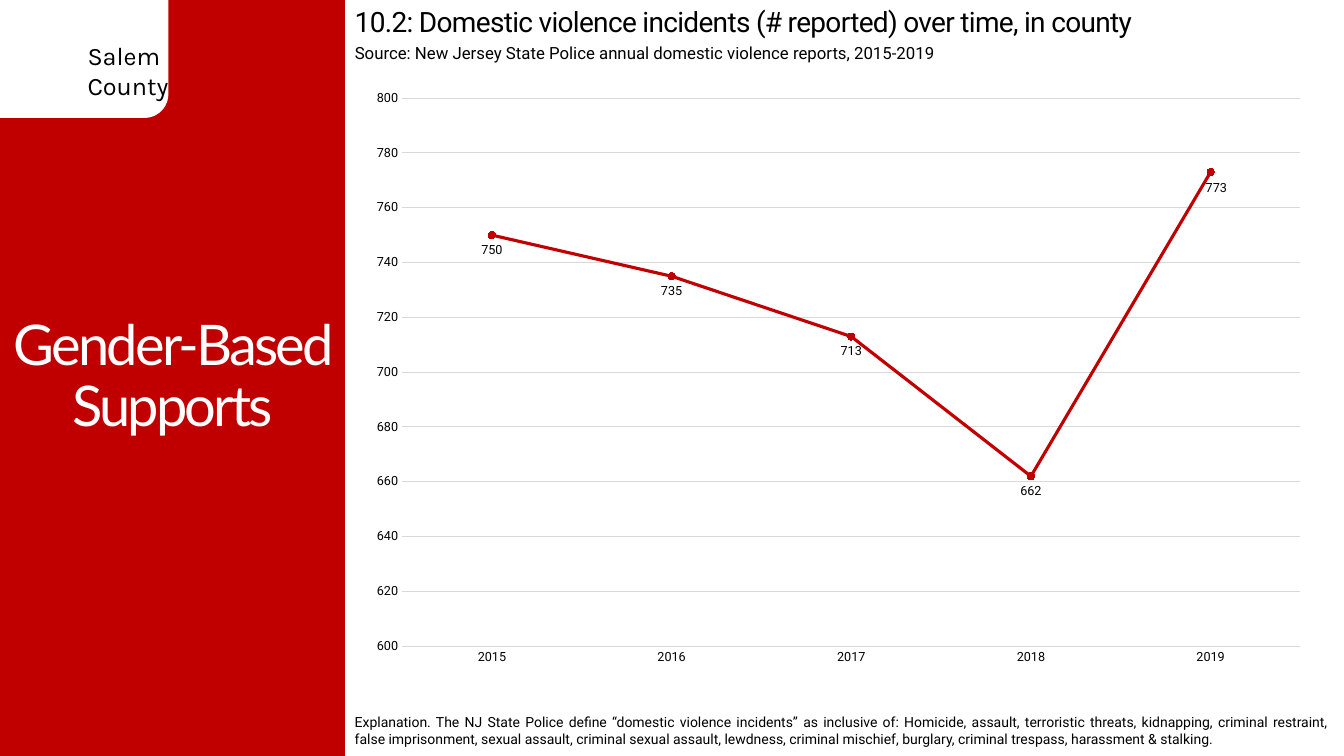
"""Builds the Salem County slide on domestic violence incidents over time."""
from lxml.etree import SubElement
from pptx import Presentation
from pptx.chart.data import CategoryChartData
from pptx.dml.color import RGBColor
from pptx.enum.chart import XL_CHART_TYPE, XL_LABEL_POSITION, XL_MARKER_STYLE, XL_TICK_MARK
from pptx.enum.shapes import MSO_SHAPE
from pptx.enum.text import MSO_ANCHOR, PP_ALIGN
from pptx.oxml import parse_xml
from pptx.oxml.ns import nsdecls, qn
from pptx.util import Pt

PX = 9144
COLORS = {"red": "C00000", "white": "FFFFFF", "black": "000000", "grid": "D9D9D9"}

PANELS = [
    (MSO_SHAPE.RECTANGLE, (0, 0, 342, 750), "red"),
    (MSO_SHAPE.ROUNDED_RECTANGLE, (-33, -25, 200, 142), "white"),
]

TEXTS = [
    {"lines": ["Salem", "County"], "box": (77, 35, 100, 71), "font": "Karla", "size": 18, "wrap": False},
    {"lines": ["10.2: Domestic violence incidents (# reported) over time, in county"],
     "box": (342, 0, 986, 44), "size": 20, "spacing": -50},
    {"lines": ["Source: New Jersey State Police annual domestic violence reports, 2015-2019"],
     "box": (342, 37, 919, 30), "size": 12},
    {"lines": ["Explanation. The NJ State Police define “domestic violence incidents” as inclusive of: "
               "Homicide, assault, terroristic threats, kidnapping, criminal restraint, false "
               "imprisonment, sexual assault, criminal sexual assault, lewdness, criminal mischief, "
               "burglary, criminal trespass, harassment & stalking."],
     "box": (342, 700, 984, 50), "size": 10, "align": PP_ALIGN.JUSTIFY, "anchor": MSO_ANCHOR.MIDDLE},
    {"lines": ["Gender-Based Supports"], "box": (-25, 75, 392, 600), "font": "Lato", "size": 40,
     "color": "white", "spacing": -200, "align": PP_ALIGN.CENTER, "anchor": MSO_ANCHOR.MIDDLE,
     "line_spacing": 0.9},
]

INCIDENTS = {"2015": 750, "2016": 735, "2017": 713, "2018": 662, "2019": 773}
CHART_BOX = (355, 79, 953, 593)
PLOT = {"x": 0.046, "y": 0.031, "w": 0.935, "h": 0.917}
LAST_LABEL_SHIFT = {"x": 0.006, "y": 0.003}
AXIS_RANGE = {"minimum_scale": 600, "maximum_scale": 800, "major_unit": 20}


def rgb(name):
    return RGBColor.from_string(COLORS[name])


def emu(box):
    return [v * PX for v in box]


def set_font(font, name="Roboto", size=9, color="black"):
    for key, value in {"name": name, "size": Pt(size), "bold": False}.items():
        setattr(font, key, value)
    font.color.rgb = rgb(color)


def set_line(line, color, width):
    line.color.rgb = rgb(color)
    line.width = Pt(width)


def manual_layout(values, modes=()):
    layout = parse_xml(f"<c:layout {nsdecls('c')}/>")
    manual = SubElement(layout, qn("c:manualLayout"))
    for tag, value in [*modes, *values.items()]:
        SubElement(manual, qn(f"c:{tag}")).set("val", str(value))
    return layout


def add_panel(slide, kind, box, color):
    s = slide.shapes.add_shape(kind, *emu(box))
    s.shadow.inherit = False
    s.fill.solid()
    s.fill.fore_color.rgb = rgb(color)
    s.line.fill.background()


def add_text(slide, item):
    tf = slide.shapes.add_textbox(*emu(item["box"])).text_frame
    tf.word_wrap = item.get("wrap", True)
    tf.vertical_anchor = item.get("anchor", MSO_ANCHOR.TOP)
    for i, line in enumerate(item["lines"]):
        p = tf.add_paragraph() if i else tf.paragraphs[0]
        p.alignment = item.get("align", PP_ALIGN.LEFT)
        p.line_spacing = item.get("line_spacing", 1.0)
        r = p.add_run()
        r.text = line
        set_font(r.font, item.get("font", "Roboto"), item["size"], item.get("color", "black"))
        if "spacing" in item:
            r.font._element.set("spc", str(item["spacing"]))


def add_incident_chart(slide):
    data = CategoryChartData()
    data.categories = list(INCIDENTS)
    data.add_series("Series 1", list(INCIDENTS.values()))
    chart = slide.shapes.add_chart(XL_CHART_TYPE.LINE_MARKERS, *emu(CHART_BOX), data).chart
    chart.has_legend = chart.has_title = False
    set_font(chart.font, "Calibri", 10)

    plot_area = chart._chartSpace.chart.plotArea
    for old in plot_area.findall(qn("c:layout")):
        plot_area.remove(old)
    modes = [("layoutTarget", "inner"), ("xMode", "edge"), ("yMode", "edge")]
    plot_area.insert(0, manual_layout(PLOT, modes))

    years, counts = chart.category_axis, chart.value_axis
    for axis in (years, counts):
        axis.major_tick_mark = axis.minor_tick_mark = XL_TICK_MARK.NONE
        set_font(axis.tick_labels.font)
    years.has_major_gridlines = False
    set_line(years.format.line, "grid", 0.75)
    for key, value in AXIS_RANGE.items():
        setattr(counts, key, value)
    counts.format.line.fill.background()
    set_line(counts.major_gridlines.format.line, "grid", 0.75)

    plot = chart.plots[0]
    plot.vary_by_categories = False
    series = plot.series[0]
    series.smooth = False
    set_line(series.format.line, "red", 2.25)
    marker = series.marker
    marker.style = XL_MARKER_STYLE.CIRCLE
    marker.size = 5
    marker.format.fill.solid()
    marker.format.fill.fore_color.rgb = rgb("red")
    set_line(marker.format.line, "red", 0.75)

    labels = series.data_labels
    labels.show_value = True
    last = series.points[len(INCIDENTS) - 1].data_label
    for label in (labels, last):
        set_font(label.font)
        label.position = XL_LABEL_POSITION.BELOW
    shifted = labels._element.find(qn("c:dLbl"))
    shifted.insert(1, manual_layout(LAST_LABEL_SHIFT))


def main():
    prs = Presentation()
    prs.slide_width, prs.slide_height = 1333 * PX, 750 * PX
    slide = prs.slides.add_slide(prs.slide_layouts[6])
    for panel in PANELS:
        add_panel(slide, *panel)
    for item in TEXTS:
        add_text(slide, item)
    add_incident_chart(slide)
    prs.save("out.pptx")


if __name__ == "__main__":
    main()
